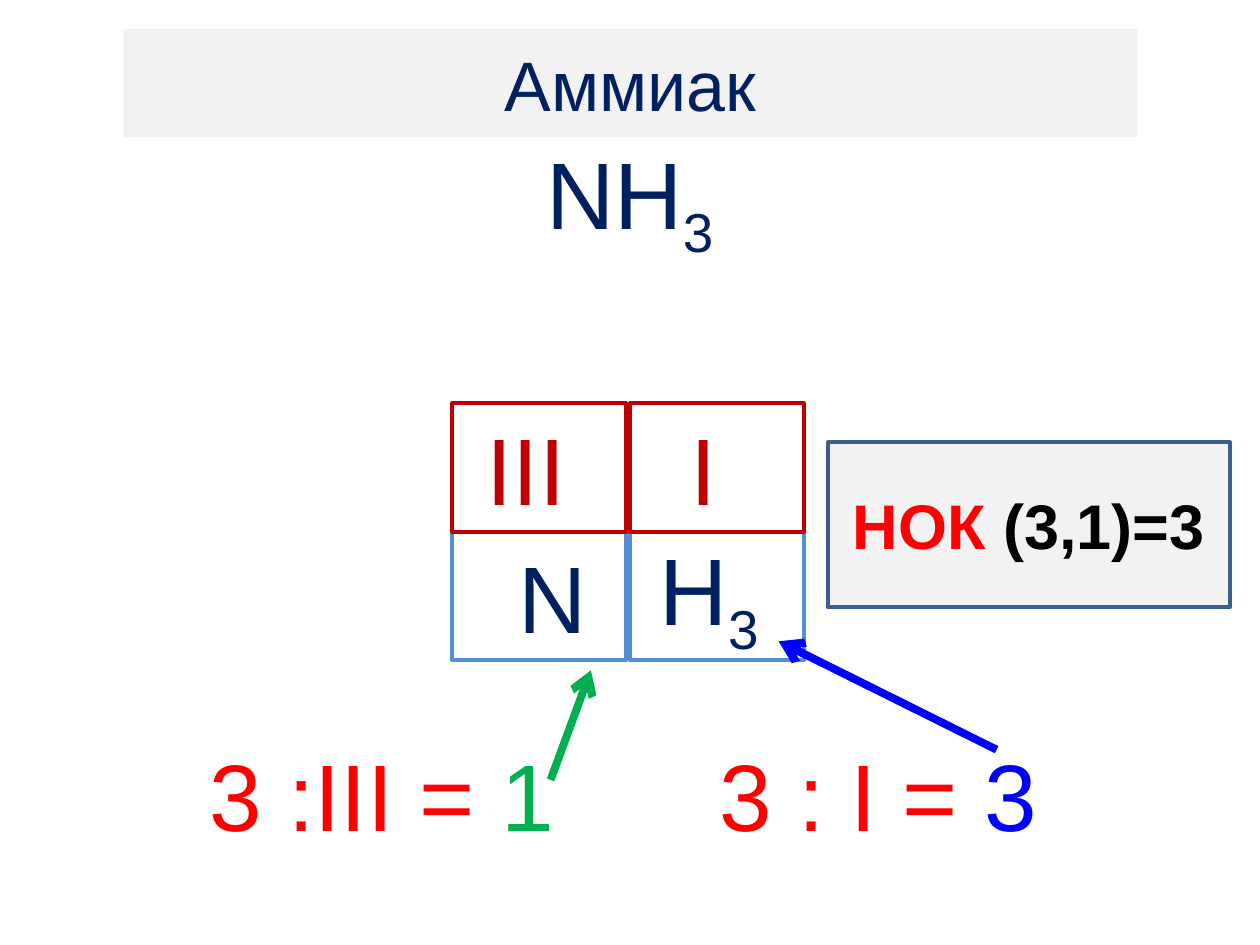
"""Build a slide that derives the formula of ammonia from valences."""
from lxml.etree import SubElement
from pptx import Presentation
from pptx.dml.color import RGBColor
from pptx.enum.shapes import MSO_CONNECTOR as Line, MSO_SHAPE as Shape
from pptx.enum.text import MSO_ANCHOR as Anchor, PP_ALIGN as Align
from pptx.oxml.ns import qn
from pptx.util import Inches, Pt

NAVY, RED, DARK = "002060", "FF0000", "C00000"
GREEN, BLUE, GRAY = "00B050", "0000FF", "F2F2F2"


def color(code):
    return RGBColor.from_string(code)


def write(box, text, size=54, fill=None, edge=None, width=2.25, bold=False):
    """Fill a box with (words, colour, subscript) parts."""
    if fill:
        box.fill.solid()
        box.fill.fore_color.rgb = color(fill)
    else:
        box.fill.background()
    if edge:
        box.line.color.rgb = color(edge)
        box.line.width = Pt(width)
    else:
        box.line.fill.background()
    frame = box.text_frame
    frame.word_wrap = True
    frame.vertical_anchor = Anchor.MIDDLE
    para = frame.paragraphs[0]
    para.alignment = Align.CENTER
    for words, tint, sub in text:
        run = para.add_run()
        run.text = words
        font = run.font
        font.name, font.size, font.bold = "Arial", Pt(size), bold
        font.color.rgb = color(tint)
        if sub:
            font._element.set("baseline", "-25000")


deck = Presentation()
deck.slide_width, deck.slide_height = Inches(10), Inches(7.5)
slide = deck.slides.add_slide(deck.slide_layouts[6])
shapes = slide.shapes

panels = [
    ((0.98, 0.23, 8.05, 0.86), [("Аммиак", NAVY, False)],
     dict(size=40, fill=GRAY)),
    ((6.57, 3.51, 3.19, 1.31), [("НОК", RED, False), (" (3,1)=3", "000000", False)],
     dict(size=36, fill=GRAY, edge="3A5F8C", width=2, bold=True)),
]
rows = [
    (4.22, "558ED5", [[(" N", NAVY, False)], [("H", NAVY, False), ("3 ", NAVY, True)]]),
    (3.2, DARK, [[("III ", DARK, False)], [("I ", DARK, False)]]),
]
for top, edge, cells in rows:
    for col, text in reversed(list(enumerate(cells))):
        spot = (3.59 + col * 1.41, top, 1.38, 1.02)
        panels.append((spot, text, dict(edge=edge)))
for spot, text, style in panels:
    box = shapes.add_shape(Shape.RECTANGLE, *map(Inches, spot))
    box.shadow.inherit = False
    write(box, text, **style)

labels = [
    ((3.62, 1.15, 2.76, 0.86), [("NН", NAVY, False), ("3", NAVY, True)]),
    ((5.16, 5.79, 3.62, 1.02), [("3 : I = ", RED, False), ("3", BLUE, False)]),
    ((1.22, 5.79, 3.62, 1.02), [("3 :III = ", RED, False), ("1", GREEN, False)]),
]
for spot, text in labels:
    write(shapes.add_textbox(*map(Inches, spot)), text)

arrows = [((4.37, 6.19, 4.69, 5.32), GREEN), ((7.91, 5.95, 6.18, 5.09), BLUE)]
for ends, tint in arrows:
    arrow = shapes.add_connector(Line.STRAIGHT, *map(Inches, ends))
    arrow.line.color.rgb = color(tint)
    arrow.line.width = Pt(4.5)
    SubElement(arrow.line._get_or_add_ln(), qn("a:tailEnd"), type="arrow")
    SubElement(arrow._element.spPr, qn("a:effectLst"))

deck.save("out.pptx")
